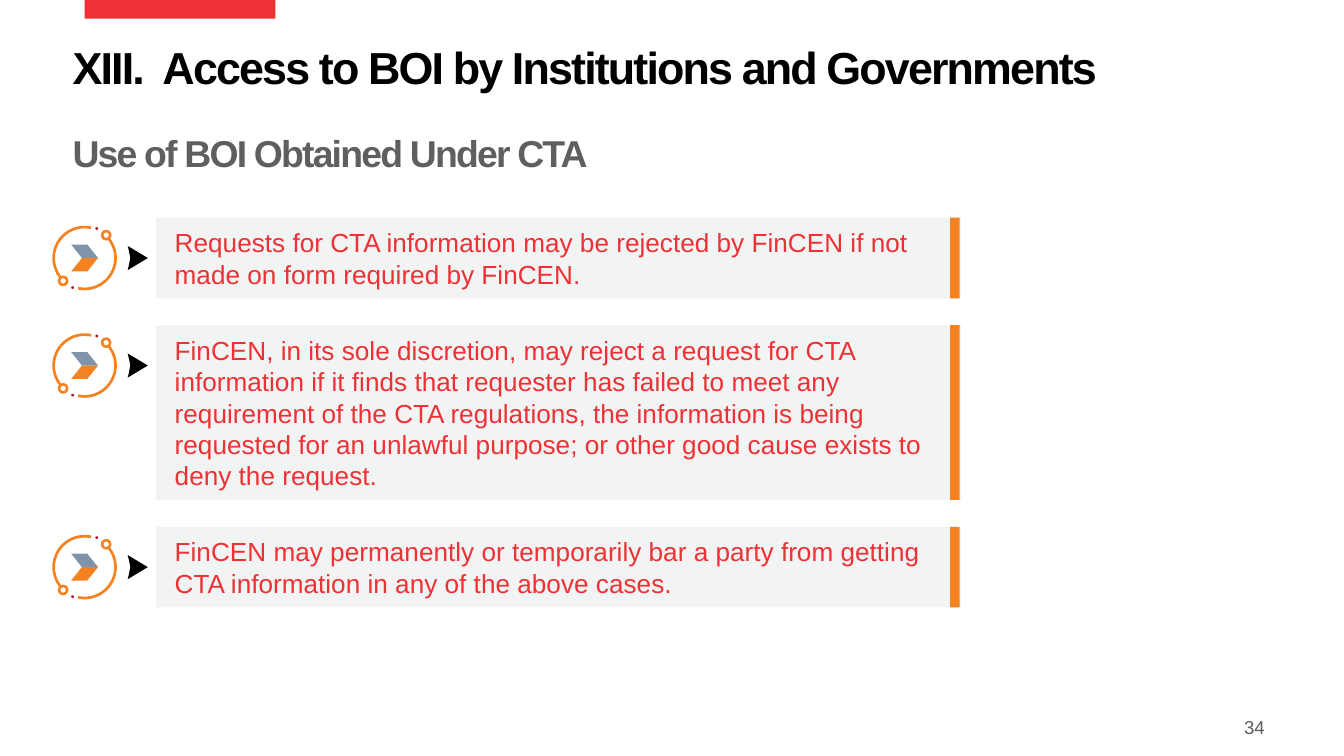
"""Build the slide on use of BOI obtained under the CTA."""
from math import cos, radians, sin

from pptx import Presentation
from pptx.dml.color import RGBColor
from pptx.enum.shapes import MSO_SHAPE
from pptx.enum.text import MSO_ANCHOR, PP_ALIGN
from pptx.util import Inches, Pt

RECTANGLE, OVAL, DONUT = MSO_SHAPE.RECTANGLE, MSO_SHAPE.OVAL, MSO_SHAPE.DONUT
TOP, MIDDLE = MSO_ANCHOR.TOP, MSO_ANCHOR.MIDDLE
LEFT, RIGHT = PP_ALIGN.LEFT, PP_ALIGN.RIGHT
RED = RGBColor(0xEE, 0x31, 0x35)
DARK_RED = RGBColor(0xAE, 0x13, 0x2A)
ORANGE = RGBColor(0xF5, 0x82, 0x20)
BLUE_GRAY = RGBColor(0x7F, 0x93, 0xAA)
LIGHT_GRAY = RGBColor(0xF2, 0xF3, 0xF3)
GRAY = RGBColor(0x5F, 0x5F, 0x5F)
BLACK = RGBColor(0, 0, 0)

prs = Presentation()
prs.slide_width = Inches(10)
prs.slide_height = Inches(10 * 9 / 16)
slide = prs.slides.add_slide(prs.slide_layouts[6])
shapes = slide.shapes


def draw(outline, color, box=None):
    """Draw a preset in a box, or a closed outline through points."""
    if box:
        shape = shapes.add_shape(outline, *map(Inches, box))
    else:
        corners = [(Inches(x), Inches(y)) for x, y in outline]
        builder = shapes.build_freeform(*corners[0])
        builder.add_line_segments(corners[1:])
        shape = builder.convert_to_shape()
    shape.fill.solid()
    shape.fill.fore_color.rgb = color
    shape.line.fill.background()
    shape.shadow.inherit = False
    return shape


def write(text, shape, size, color, bold=False, align=LEFT, anchor=TOP,
          line_spacing=1.0, tracking=0, insets=(0, 0, 0, 0)):
    frame = shape.text_frame
    frame.word_wrap = True
    frame.vertical_anchor = anchor
    (frame.margin_left, frame.margin_top,
     frame.margin_right, frame.margin_bottom) = map(Inches, insets)
    paragraph = frame.paragraphs[0]
    paragraph.alignment = align
    paragraph.line_spacing = line_spacing
    run = paragraph.add_run()
    run.text = text
    run.font.name, run.font.size, run.font.bold = "Arial", Pt(size), bold
    run.font.color.rgb = color
    if tracking:
        run.font._element.set("spc", str(tracking * 100))


draw(RECTANGLE, RED, (0.63, 0, 1.42, 0.14))

HEADINGS = [
    ("XIII.  Access to BOI by Institutions and Governments", 0.34, 24, BLACK),
    ("Use of BOI Obtained Under CTA", 1.01, 20, GRAY),
]
for heading, top, size, color in HEADINGS:
    heading_box = shapes.add_textbox(Inches(0.54), Inches(top), Inches(8.79), Inches(0.5))
    write(heading, heading_box, size, color, bold=True, line_spacing=0.9, tracking=-1)

RULES = [
    ("Requests for CTA information may be rejected by FinCEN if not made on "
     "form required by FinCEN.", 0.6),
    ("FinCEN, in its sole discretion, may reject a request for CTA information "
     "if it finds that requester has failed to meet any requirement of the CTA "
     "regulations, the information is being requested for an unlawful purpose; "
     "or other good cause exists to deny the request.", 1.3),
    ("FinCEN may permanently or temporarily bar a party from getting CTA "
     "information in any of the above cases.", 0.6),
]
GAP = 0.2
ICON_X = 0.63
RING_OUTER, RING_INNER = 0.24, 0.22
KNOB, DOT = 0.08, 0.02
CHEVRON = [(-0.1, -0.1), (0.02, -0.1), (0.1, 0), (-0.02, 0)]
POINTER = [(0.95, -0.09), (1.1, 0), (0.95, 0.09), (0.96, 0.05), (0.97, 0), (0.96, -0.05)]

card_top = 1.62
for rule, height in RULES:
    icon_y = card_top + 0.3
    for side, chevron_color in ((1, BLUE_GRAY), (-1, ORANGE)):
        sweep = [radians(angle) for angle in range(-38, 103, 4)]
        arc = [(RING_OUTER * cos(a), RING_OUTER * sin(a)) for a in sweep]
        arc += [(RING_INNER * cos(a), RING_INNER * sin(a)) for a in reversed(sweep)]
        draw([(ICON_X + side * x, icon_y + side * y) for x, y in arc], ORANGE)

        knob_x, knob_y = ICON_X + side * 0.16, icon_y - side * 0.17
        knob = draw(DONUT, ORANGE, (knob_x - KNOB / 2, knob_y - KNOB / 2, KNOB, KNOB))
        knob.adjustments[0] = 0.25

        dot_x, dot_y = ICON_X + side * 0.09, icon_y - side * 0.22
        draw(OVAL, DARK_RED, (dot_x - DOT / 2, dot_y - DOT / 2, DOT, DOT))

        draw([(ICON_X + x, icon_y + side * y) for x, y in CHEVRON], chevron_color)

    draw([(x, icon_y + y) for x, y in POINTER], BLACK)
    card = draw(RECTANGLE, LIGHT_GRAY, (1.16, card_top, 5.99, height))
    write(rule, card, 14, RED, anchor=MIDDLE, insets=(0.14, 0.03, 0, 0.03))
    draw(RECTANGLE, ORANGE, (7.07, card_top, 0.07, height))
    card_top += height + GAP

page_number = shapes.add_textbox(Inches(8.52), Inches(5.3), Inches(0.89), Inches(0.22))
write("34", page_number, 10, GRAY, align=RIGHT, anchor=MIDDLE)

prs.save("out.pptx")
